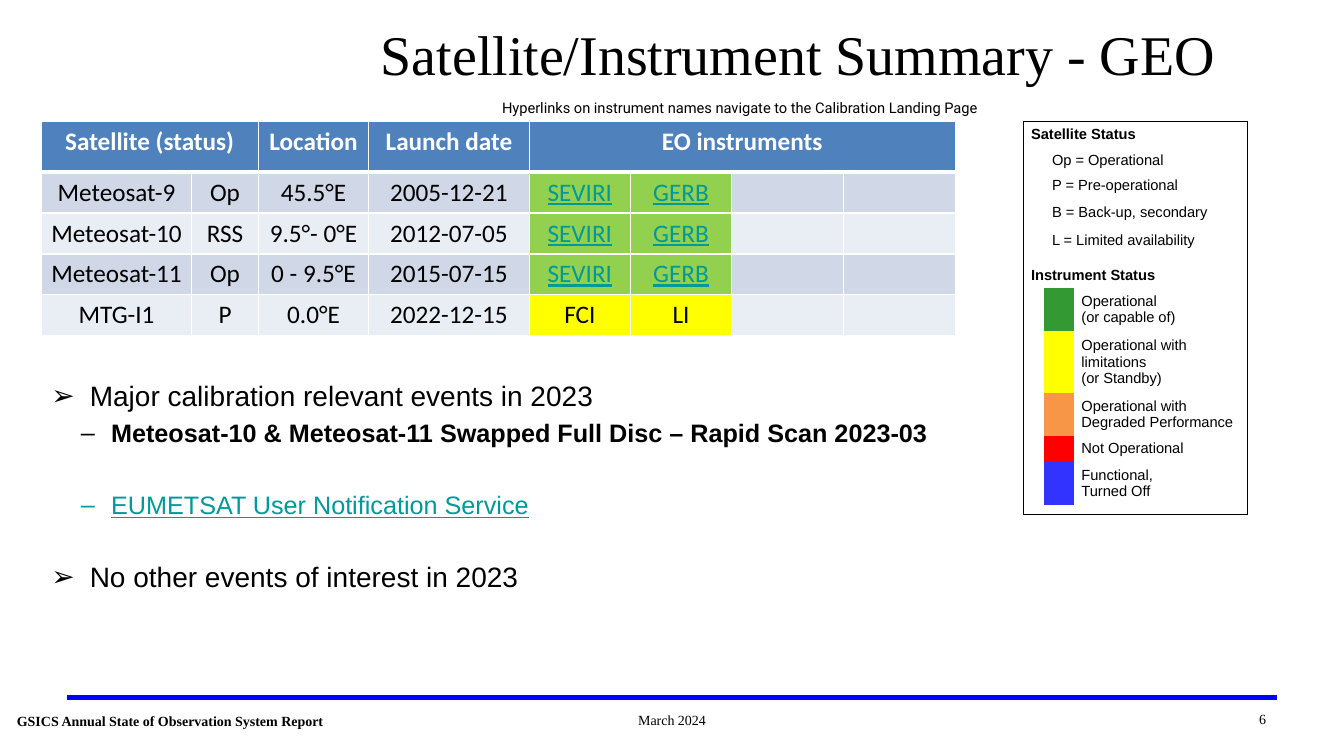
from lxml.etree import SubElement
from pptx import Presentation
from pptx.dml.color import RGBColor
from pptx.enum.shapes import MSO_CONNECTOR
from pptx.enum.text import MSO_ANCHOR, MSO_AUTO_SIZE, PP_ALIGN
from pptx.oxml.ns import qn
from pptx.util import Pt

BLACK, WHITE, TEAL, HEADER_BLUE = "000000", "FFFFFF", "009999", "4F81BD"
BANDS = ["D0D8E8", "E9EDF4"]
GREEN, YELLOW = "92D050", "FFFF00"
PLAIN_TABLE = "{2D5ABB26-0587-4C30-8999-92F81FD0307C}"

HEADINGS = [(0, 1, "Satellite (status)"), (2, 2, "Location"),
            (3, 3, "Launch date"), (4, 7, "EO instruments")]
SATELLITES = [
    ["Meteosat-9", "Op", "45.5°E", "2005-12-21", "SEVIRI", "GERB", "", ""],
    ["Meteosat-10", "RSS", "9.5°- 0°E", "2012-07-05", "SEVIRI", "GERB", "", ""],
    ["Meteosat-11", "Op", "0 - 9.5°E", "2015-07-15", "SEVIRI", "GERB", "", ""],
    ["MTG-I1", "P", "0.0°E", "2022-12-15", "FCI", "LI", "", ""],
]
SATELLITE_COLUMNS = [107.5, 47.5, 79, 114.5, 72.5, 72, 80, 80]

# Row height, swatch colour, text; a heading spans all columns.
LEGEND = [
    (18, "heading", "Satellite Status"),
    (18, None, "Op = Operational"),
    (18, None, "P = Pre-operational"),
    (21, None, "B = Back-up, secondary"),
    (18, None, "L = Limited availability"),
    (7, None, ""),
    (18, "heading", "Instrument Status"),
    (30.5, "339933", "Operational\n(or capable of)"),
    (44, "FFFF00", "Operational with limitations\n(or Standby)"),
    (31, "F79646", "Operational with Degraded Performance"),
    (18, "FF0000", "Not Operational"),
    (30.5, "3333FF", "Functional,\vTurned Off"),
    (7, None, ""),
]
LEGEND_COLUMNS = [15, 21, 124]

# Level, space before, text, colour, bold, underline.
EVENTS = [
    (0, 0, "Major calibration relevant events in 2023", BLACK, False, False),
    (1, 3.5, "Meteosat-10 & Meteosat-11 Swapped Full Disc – Rapid Scan 2023-03",
     BLACK, True, False),
    (1, 29.8, "EUMETSAT User Notification Service", TEAL, False, True),
    (0, 28.8, "No other events of interest in 2023", BLACK, False, False),
]
LEVELS = [("➢", 20, 27.4, -27.4), ("–", 18, 42.7, -21.6)]


def colour(value):
    return RGBColor.from_string(value)


def set_font(para, name, size, value=BLACK, bold=False, underline=False):
    font = para.font
    font.name, font.size = name, Pt(size)
    font.bold, font.underline = bold, underline
    font.color.rgb = colour(value)


def place(shape, left, top, width, height):
    shape.left, shape.top = Pt(left), Pt(top)
    shape.width, shape.height = Pt(width), Pt(height)


def add_label(page, box, text, font, size, align=PP_ALIGN.LEFT, bold=False, wrap=True):
    frame = page.shapes.add_textbox(*map(Pt, box)).text_frame
    frame.word_wrap = wrap
    frame.text = text
    frame.paragraphs[0].alignment = align
    set_font(frame.paragraphs[0], font, size, bold=bold)


def add_plain_table(page, left, top, columns, rows):
    """Add a table without a built-in style, sized by its columns and rows."""
    frame = page.shapes.add_table(len(rows), len(columns), Pt(left), Pt(top),
                                  Pt(sum(columns)), Pt(sum(rows)))
    table = frame.table
    table.first_row = table.horz_banding = False
    table._tbl.tblPr.find(qn("a:tableStyleId")).text = PLAIN_TABLE
    for column, width in zip(table.columns, columns):
        column.width = Pt(width)
    for row, height in zip(table.rows, rows):
        row.height = Pt(height)
    return table


def fill_cell(cell, value):
    cell.fill.solid()
    cell.fill.fore_color.rgb = colour(value)


def set_borders(cell, value, **widths):
    """Draw the named sides (L, R, T, B) at their widths in points."""
    properties = cell._tc.get_or_add_tcPr()
    sides = [side for side in "LRTB" if side in widths]
    for index, side in enumerate(sides):
        line = SubElement(properties, qn(f"a:ln{side}"), w=str(Pt(widths[side])))
        fill = SubElement(line, qn("a:solidFill"))
        SubElement(fill, qn("a:srgbClr"), val=value)
        properties.insert(index, line)


def shrink_empty(cell):
    """Keep an empty cell from stretching its row or column."""
    cell.margin_left = cell.margin_right = 0
    cell.margin_top = cell.margin_bottom = 0
    SubElement(cell.text_frame.paragraphs[0]._p, qn("a:endParaRPr"), sz="400")


def write_satellite_cell(cell, text, value=BLACK, bold=False, underline=False):
    cell.text = text
    cell.margin_left = cell.margin_right = Pt(3)
    para = cell.text_frame.paragraphs[0]
    para.alignment = PP_ALIGN.CENTER
    set_font(para, "Calibri", 18, value, bold, underline)


def add_satellite_table(page, left, top):
    table = add_plain_table(page, left, top, SATELLITE_COLUMNS,
                            [36] + [29.2] * len(SATELLITES))
    for cell in table.rows[0].cells:
        fill_cell(cell, HEADER_BLUE)
        set_borders(cell, WHITE, L=1, R=1, T=1, B=3)
    for first, last, heading in HEADINGS:
        if last > first:
            table.cell(0, first).merge(table.cell(0, last))
        write_satellite_cell(table.cell(0, first), heading, WHITE, bold=True)
    for row, values in enumerate(SATELLITES, 1):
        for column, text in enumerate(values):
            cell = table.cell(row, column)
            linked = text in ("SEVIRI", "GERB")
            limited = text in ("FCI", "LI")
            band = BANDS[(row - 1) % 2]
            fill_cell(cell, GREEN if linked else YELLOW if limited else band)
            set_borders(cell, WHITE, L=1, R=1, T=3 if row == 1 else 1, B=1)
            if text:
                write_satellite_cell(cell, text, TEAL if linked else BLACK,
                                     underline=linked)
            else:
                shrink_empty(cell)


def add_legend(page, left, top):
    table = add_plain_table(page, left, top, LEGEND_COLUMNS,
                            [height for height, _, _ in LEGEND])
    last_row, last_column = len(LEGEND) - 1, len(LEGEND_COLUMNS) - 1
    for row, (_, kind, text) in enumerate(LEGEND):
        is_heading = kind == "heading"
        has_swatch = kind is not None and not is_heading
        text_column = 0 if is_heading else 2 if has_swatch else 1
        for column in range(len(LEGEND_COLUMNS)):
            cell = table.cell(row, column)
            fill_cell(cell, kind if has_swatch and column == 1 else WHITE)
            edges = {"L": column == 0, "R": column in (text_column, last_column),
                     "T": row == 0, "B": row == last_row}
            set_borders(cell, BLACK, **{side: 1 for side, on in edges.items() if on})
            if column != text_column or not text:
                shrink_empty(cell)
        cell = table.cell(row, text_column)
        if text_column < last_column:
            cell.merge(table.cell(row, last_column))
        if text:
            cell.text = text
            cell.vertical_anchor = MSO_ANCHOR.MIDDLE
            cell.margin_left = Pt(5.5)
            cell.margin_right = cell.margin_top = cell.margin_bottom = Pt(2.8)
            for para in cell.text_frame.paragraphs:
                set_font(para, "Arial", 10.5, bold=is_heading)


def add_title(page, box):
    title = page.shapes.title
    place(title, *box)
    frame = title.text_frame
    frame.auto_size = MSO_AUTO_SIZE.NONE
    frame.vertical_anchor = MSO_ANCHOR.MIDDLE
    frame.text = "Satellite/Instrument Summary - GEO"
    frame.paragraphs[0].alignment = PP_ALIGN.CENTER
    set_font(frame.paragraphs[0], "Times New Roman", 40)


def add_events(page, box):
    body = page.placeholders[1]
    place(body, *box)
    frame = body.text_frame
    frame.auto_size = MSO_AUTO_SIZE.NONE
    frame.text = "\n".join(event[2] for event in EVENTS)
    for para, (level, before, _, value, bold, underline) in zip(frame.paragraphs, EVENTS):
        bullet, size, margin, indent = LEVELS[level]
        para.level = level
        para.space_before = Pt(before)
        properties = para._p.get_or_add_pPr()
        properties.set("marL", str(Pt(margin)))
        properties.set("indent", str(Pt(indent)))
        SubElement(properties, qn("a:buChar"), char=bullet)
        set_font(para, "Arial", size, value, bold, underline)


def add_footer(page, top):
    rule = page.shapes.add_connector(MSO_CONNECTOR.STRAIGHT, Pt(48), Pt(top),
                                     Pt(912), Pt(top))
    rule.line.color.rgb = colour("0000FF")
    rule.line.width = Pt(3)
    SubElement(rule._element.spPr, qn("a:effectLst"))
    for left, offset, width, text, align, bold in [
        (5, 7.2, 243, "GSICS Annual State of Observation System Report", PP_ALIGN.LEFT, True),
        (263.5, 6.5, 433, "March 2024", PP_ALIGN.CENTER, False),
        (768, 6, 143.5, "6", PP_ALIGN.RIGHT, False),
    ]:
        add_label(page, (left, top + offset, width, 18), text,
                  "Times New Roman", 10, align, bold)


def main():
    deck = Presentation()
    deck.slide_width, deck.slide_height = Pt(960), Pt(540)
    page = deck.slides.add_slide(deck.slide_layouts[1])
    add_footer(page, 498.2)
    add_title(page, (264, 11.5, 612, 52.5))
    add_satellite_table(page, 29.5, 87)
    add_events(page, (29.5, 267, 652.5, 260))
    add_label(page, (351.5, 67, 358, 20),
              "Hyperlinks on instrument names navigate to the Calibration Landing Page",
              "Roboto", 10.5, wrap=False)
    add_legend(page, 731, 87)
    deck.save("out.pptx")


if __name__ == "__main__":
    main()
